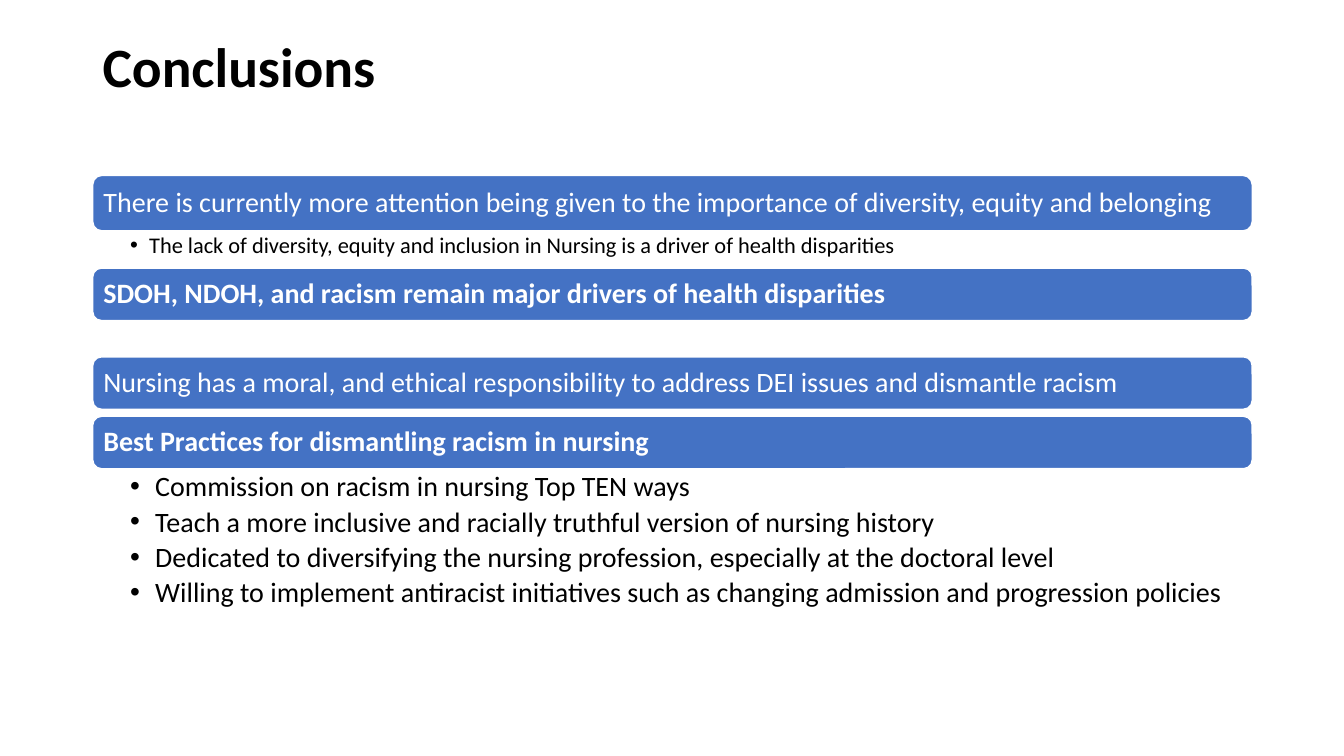
import pptx
import pptx.dml.color
import pptx.enum.shapes
import pptx.enum.text
import pptx.oxml.ns
import pptx.util
from lxml import etree

Inches = pptx.util.Inches
Pt = pptx.util.Pt
ANCHOR = pptx.enum.text.MSO_ANCHOR
COLORS = {"bar": "4472C4", "white": "FFFFFF", "black": "000000"}
FONT = "Calibri"
LEFT, WIDTH = 0.92, 11.5

# Bars: top, height, bold, text
BARS = [
    (1.74, 0.55, False, "There is currently more attention being given to the "
     "importance of diversity, equity and belonging"),
    (2.66, 0.52, True, "SDOH, NDOH, and racism remain major drivers of health disparities"),
    (3.54, 0.52, False, "Nursing has a moral, and ethical responsibility to "
     "address DEI issues and dismantle racism"),
    (4.13, 0.52, True, "Best Practices for dismantling racism in nursing"),
]

# Bullet lists: top, height, size, hanging indent, items
BULLET_LISTS = [
    (2.29, 0.36, 16, 0.19, [
        "The lack of diversity, equity and inclusion in Nursing is a driver of health disparities",
    ]),
    (4.66, 1.49, 20, 0.25, [
        "Commission on racism in nursing Top TEN ways",
        "Teach a more inclusive and racially truthful version of nursing history",
        "Dedicated to diversifying the nursing profession, especially at the doctoral level",
        "Willing to implement antiracist initiatives such as changing "
        "admission and progression policies",
    ]),
]


def rgb(name):
    return pptx.dml.color.RGBColor.from_string(COLORS[name])


def set_frame(tf, anchor, left, top, right, bottom):
    tf.word_wrap = True
    tf.vertical_anchor = anchor
    tf.margin_left, tf.margin_top = Inches(left), Inches(top)
    tf.margin_right, tf.margin_bottom = Inches(right), Inches(bottom)


def write(p, text, size, color, bold=False):
    p.text = text
    p.alignment = pptx.enum.text.PP_ALIGN.LEFT
    p.line_spacing = 0.9
    font = p.runs[0].font
    font.name, font.size, font.bold = FONT, Pt(size), bold
    font.color.rgb = rgb(color)


def add_bullet(p, indent):
    pPr = p._p.get_or_add_pPr()
    pPr.set("marL", str(Inches(indent)))
    pPr.set("indent", str(-Inches(indent)))
    qn = pptx.oxml.ns.qn
    etree.SubElement(pPr, qn("a:buFont")).set("typeface", "Arial")
    etree.SubElement(pPr, qn("a:buChar")).set("char", "•")


def add_text_box(s, top, height):
    return s.shapes.add_textbox(
        Inches(LEFT), Inches(top), Inches(WIDTH), Inches(height)).text_frame


def add_title(s, text):
    tf = add_text_box(s, 0.31, 0.76)
    set_frame(tf, ANCHOR.MIDDLE, 0.1, 0.05, 0.1, 0.05)
    write(tf.paragraphs[0], text, 39.6, "black", True)


def add_bar(s, top, height, bold, text):
    sp = s.shapes.add_shape(
        pptx.enum.shapes.MSO_SHAPE.ROUNDED_RECTANGLE,
        Inches(LEFT), Inches(top), Inches(WIDTH), Inches(height))
    sp.shadow.inherit = False
    sp.fill.solid()
    sp.fill.fore_color.rgb = rgb("bar")
    sp.line.color.rgb = rgb("white")
    sp.line.width = Pt(1)
    set_frame(sp.text_frame, ANCHOR.MIDDLE, 0.08, 0.08, 0.08, 0.08)
    write(sp.text_frame.paragraphs[0], text, 20, "white", bold)


def add_bullet_list(s, top, height, size, indent, items):
    tf = add_text_box(s, top, height)
    set_frame(tf, ANCHOR.TOP, 0.37, 0.03, 0.16, 0.03)
    for i, item in enumerate(items):
        p = tf.add_paragraph() if i else tf.paragraphs[0]
        p.level = 1
        add_bullet(p, indent)
        write(p, item, size, "black")
        p.space_after = Pt(3.5)


def main():
    prs = pptx.Presentation()
    prs.slide_width, prs.slide_height = Inches(13.33), Inches(7.5)
    s = prs.slides.add_slide(prs.slide_layouts[6])

    add_title(s, "Conclusions")
    for bar in BARS:
        add_bar(s, *bar)
    for bullet_list in BULLET_LISTS:
        add_bullet_list(s, *bullet_list)

    prs.save("out.pptx")


if __name__ == "__main__":
    main()
